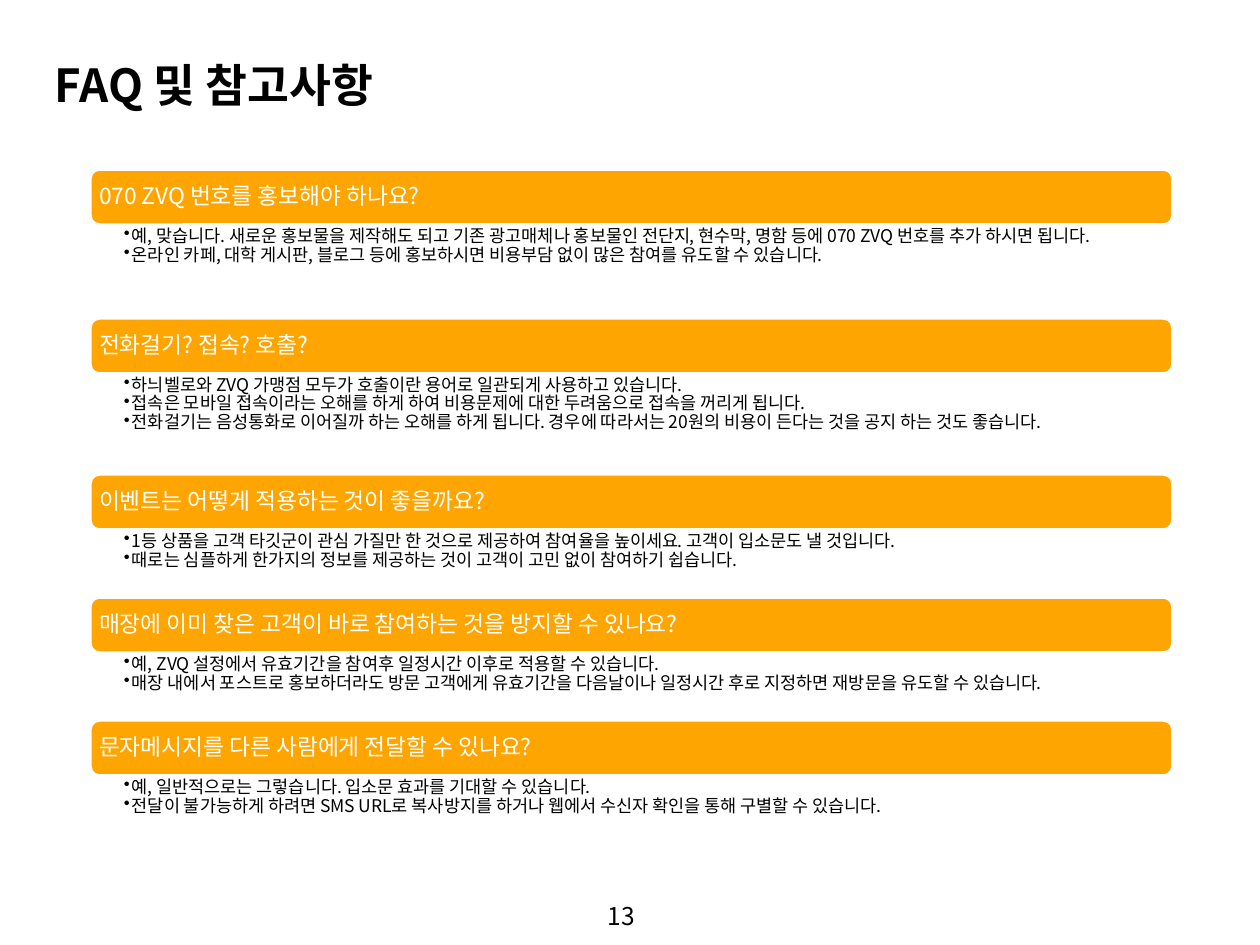
from dataclasses import dataclass

from lxml import etree
from pptx import Presentation
from pptx.dml.color import RGBColor
from pptx.enum.shapes import MSO_SHAPE
from pptx.enum.text import MSO_ANCHOR, PP_ALIGN
from pptx.oxml.ns import qn
from pptx.util import Pt

ROUNDED = MSO_SHAPE.ROUNDED_RECTANGLE
TOP, MIDDLE = MSO_ANCHOR.TOP, MSO_ANCHOR.MIDDLE
LEFT, CENTER = PP_ALIGN.LEFT, PP_ALIGN.CENTER
PX = 914400 // 126


@dataclass(frozen=True)
class Theme:
    font: str = "Noto Sans CJK KR"
    ink: RGBColor = RGBColor(0x00, 0x00, 0x00)
    paper: RGBColor = RGBColor(0xFF, 0xFF, 0xFF)
    bar: RGBColor = RGBColor(0xFE, 0xA5, 0x01)
    title_size: int = 26
    question_size: int = 13
    answer_size: int = 10
    number_size: int = 14


THEME = Theme()

# Question, height of the answer area, answers
FAQ = [
    ("070 ZVQ 번호를 홍보해야 하나요?", 93, [
        "예, 맞습니다. 새로운 홍보물을 제작해도 되고 기존 광고매체나 홍보물인 전단지, 현수막, 명함 등에 070 ZVQ 번호를 추가 하시면 됩니다.",
        "온라인 카페, 대학 게시판, 블로그 등에 홍보하시면 비용부담 없이 많은 참여를 유도할 수 있습니다.",
    ]),
    ("전화걸기? 접속? 호출?", 100, [
        "하늬벨로와 ZVQ 가맹점 모두가 호출이란 용어로 일관되게 사용하고 있습니다.",
        "접속은 모바일 접속이라는 오해를 하게 하여 비용문제에 대한 두려움으로 접속을 꺼리게 됩니다.",
        "전화걸기는 음성통화로 이어질까 하는 오해를 하게 됩니다. 경우에 따라서는 20원의 비용이 든다는 것을 공지 하는 것도 좋습니다.",
    ]),
    ("이벤트는 어떻게 적용하는 것이 좋을까요?", 67, [
        "1등 상품을 고객 타깃군이 관심 가질만 한 것으로 제공하여 참여율을 높이세요. 고객이 입소문도 낼 것입니다.",
        "때로는 심플하게 한가지의 정보를 제공하는 것이 고객이 고민 없이 참여하기 쉽습니다.",
    ]),
    ("매장에 이미 찾은 고객이 바로 참여하는 것을 방지할 수 있나요?", 67, [
        "예, ZVQ 설정에서 유효기간을 참여후 일정시간 이후로 적용할 수 있습니다.",
        "매장 내에서 포스트로 홍보하더라도 방문 고객에게 유효기간을 다음날이나 일정시간 후로 지정하면 재방문을 유도할 수 있습니다.",
    ]),
    ("문자메시지를 다른 사람에게 전달할 수 있나요?", 67, [
        "예, 일반적으로는 그렇습니다. 입소문 효과를 기대할 수 있습니다.",
        "전달이 불가능하게 하려면 SMS URL로 복사방지를 하거나 웹에서 수신자 확인을 통해 구별할 수 있습니다.",
    ]),
]

deck = Presentation()
deck.slide_width, deck.slide_height = 1260 * PX, 945 * PX
page = deck.slides.add_slide(deck.slide_layouts[6])


def add_text(area, lines, size, color, insets=(13, 6, 13, 6), anchor=TOP,
             align=LEFT, spacing=0.9, bold=False, bullet_indent=0):
    """Add a text box; area is left, top, width, height and insets run from left clockwise."""
    box = page.shapes.add_textbox(*(value * PX for value in area))
    frame = box.text_frame
    frame.word_wrap = True
    frame.vertical_anchor = anchor
    (frame.margin_left, frame.margin_top,
     frame.margin_right, frame.margin_bottom) = (value * PX for value in insets)
    for index, line in enumerate(lines):
        para = frame.add_paragraph() if index else frame.paragraphs[0]
        para.alignment = align
        para.line_spacing = spacing
        if bullet_indent:
            properties = para._p.get_or_add_pPr()
            properties.set("marL", str(bullet_indent * PX))
            properties.set("indent", str(-bullet_indent * PX))
            etree.SubElement(properties, qn("a:buChar")).set("char", "•")
        span = para.add_run()
        span.text = line
        span.font.size = Pt(size)
        span.font.bold = bold
        span.font.color.rgb = color
        span.font.name = THEME.font
        east_asian = etree.SubElement(span._r.get_or_add_rPr(), qn("a:ea"))
        east_asian.set("typeface", THEME.font)


add_text((593, 895, 57, 43), ["13"], THEME.number_size, THEME.ink,
         align=CENTER, spacing=1.0)
add_text((42, 57, 1174, 89), ["FAQ 및 참고사항"], THEME.title_size, THEME.ink, bold=True)

bar_left, bar_width, bar_height, bar_padding = 90, 1083, 56, 3
top = 169
for question, answer_height, answers in FAQ:
    bar = page.shapes.add_shape(ROUNDED, bar_left * PX, top * PX,
                                bar_width * PX, bar_height * PX)
    bar.shadow.inherit = False
    bar.fill.solid()
    bar.fill.fore_color.rgb = THEME.bar
    bar.line.color.rgb = THEME.paper
    bar.line.width = Pt(2)
    add_text((bar_left + bar_padding, top + bar_padding,
              bar_width - 2 * bar_padding, bar_height - 2 * bar_padding),
             [question], THEME.question_size, THEME.paper,
             insets=(6, 6, 6, 6), anchor=MIDDLE)
    add_text((bar_left, top + bar_height, bar_width, answer_height), answers,
             THEME.answer_size, THEME.ink, insets=(34, 2, 13, 2), bullet_indent=8)
    top += bar_height + answer_height

deck.save("out.pptx")
